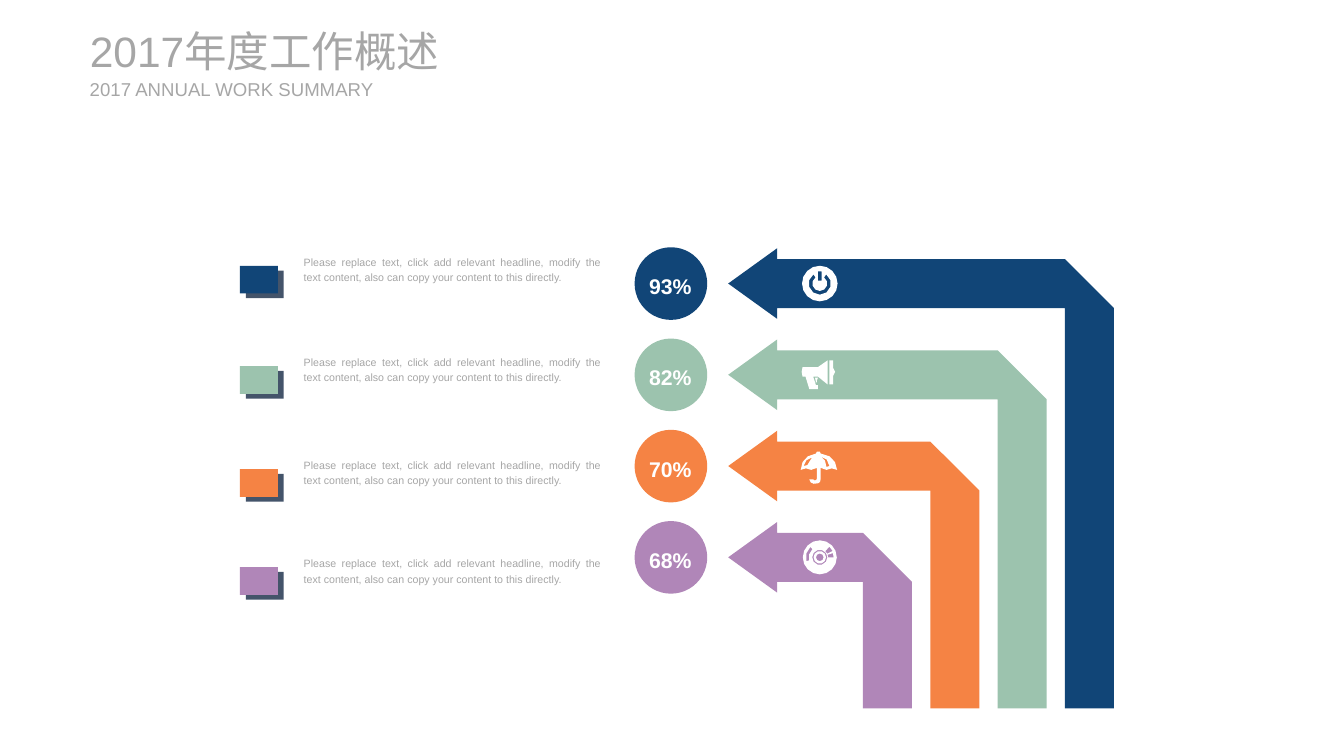
import math

import pptx
import pptx.util
from pptx.dml.color import RGBColor
from pptx.enum.shapes import MSO_SHAPE
from pptx.enum.text import MSO_ANCHOR, MSO_AUTO_SIZE, PP_ALIGN

Pt = pptx.util.Pt

NAVY = RGBColor(0x11, 0x45, 0x77)
GREEN = RGBColor(0x9C, 0xC3, 0xAE)
ORANGE = RGBColor(0xF5, 0x83, 0x44)
PURPLE = RGBColor(0xB0, 0x86, 0xB8)
SLATE = RGBColor(0x44, 0x54, 0x6A)
GREY = RGBColor(0xA6, 0xA6, 0xA6)
WHITE = RGBColor(0xFF, 0xFF, 0xFF)

BODY = ("Please replace text, click add relevant headline, modify the text "
        "content, also can copy your content to this directly.")


# Text and shape helpers
def write_text(tf, text, *, size, color=GREY, bold=False, align=PP_ALIGN.LEFT,
               anchor=MSO_ANCHOR.TOP, spacing=1.0, margins=(0, 0), wrap=True):
    tf.word_wrap = wrap
    tf.auto_size = MSO_AUTO_SIZE.NONE
    tf.vertical_anchor = anchor
    tf.margin_left = tf.margin_right = Pt(margins[0])
    tf.margin_top = tf.margin_bottom = Pt(margins[1])
    p = tf.paragraphs[0]
    p.alignment = align
    p.line_spacing = spacing
    r = p.add_run()
    r.text = text
    r.font.name = "Arial"
    r.font.size = Pt(size)
    r.font.bold = bold
    r.font.color.rgb = color


def paint(sp, color):
    sp.shadow.inherit = False
    sp.fill.solid()
    sp.fill.fore_color.rgb = color
    sp.line.fill.background()


def add_preset(slide, kind, x, y, w, h, color):
    sp = slide.shapes.add_shape(kind, Pt(x), Pt(y), Pt(w), Pt(h))
    paint(sp, color)
    return sp


def add_outline(slide, x, y, contours, color):
    """Fill closed contours whose points are relative to (x, y)."""
    fb = None
    for contour in contours:
        pts = [(Pt(x + px), Pt(y + py)) for px, py in contour]
        if fb is None:
            fb = slide.shapes.build_freeform(*pts[0])
        else:
            fb.move_to(*pts[0])
        fb.add_line_segments(pts[1:], close=True)
    paint(fb.convert_to_shape(), color)


# Contour helpers
def arc(radius, start, end, steps):
    angles = [math.radians(start + (end - start) * i / steps)
              for i in range(steps + 1)]
    return [(radius * math.cos(a), radius * math.sin(a)) for a in angles]


def circle(radius, steps):
    return arc(radius, 0, 360, steps)[:-1]


def sector(inner, outer, start, end, steps=1):
    return arc(outer, start, end, steps) + arc(inner, end, start, steps)


def curve(a, b, c, d, steps=3):
    """Points along a cubic curve, without its end point."""
    pts = []
    for i in range(steps):
        t = i / steps
        u = 1 - t
        weights = (u ** 3, 3 * u * u * t, 3 * u * t * t, t ** 3)
        pts.append(tuple(sum(k * p[axis] for k, p in zip(weights, (a, b, c, d)))
                         for axis in (0, 1)))
    return pts


# Icons, in points from the icon centre
POWER = [
    circle(13.4, 16),
    sector(5.6, 8.4, -55, 235, 8),
    [(-1.4, -9.2), (1.4, -9.2), (1.4, -2.2), (-1.4, -2.2)],
]
MEGAPHONE = [
    [(-13, -5.8), (-1.4, -5.8), (5.8, -10.8), (5.8, 7.2), (-1.4, 1.4), (-5, 1.4),
     (-2.9, 7.9), (-1.4, 7.9), (-1.4, 10.8), (-7.9, 10.8), (-10.8, 1.4),
     (-13, 1.4), (-13.7, -2.2)],
    [(7.2, -10.8), (10.1, -10.8), (10.1, -5), (11.5, -2.2), (10.1, 0.7),
     (10.1, 7.2), (7.2, 7.2)],
    [(-1.4, 2.2), (-3.6, 2.2), (-2.9, 5.8), (-2.2, 5.8), (-2.2, 4.3)],
]
UMBRELLA = [
    [*curve((-14.4, 2.9), (-14.4, -3.6), (-10, -8.6), (-2.9, -9.4)),
     (-2.9, -9.4), (-2.2, -10.8), (0, -10.8),
     *curve((0.7, -9.4), (8.6, -8.6), (12.6, -3.6), (13, 2.9)),
     *curve((13, 2.9), (10.1, 1.4), (7.9, 1.4), (5, 2.9), 2),
     (5, 2.9), (0.7, 1.4),
     *curve((0.7, 9.4), (0.7, 11.5), (0, 13), (-1.4, 13), 2),
     *curve((-1.4, 13), (-5, 14), (-7.5, 13), (-7.9, 10.1)),
     (-7.9, 10.1),
     *curve((-5, 10.1), (-4.5, 11.2), (-2.2, 11.2), (-2.2, 9.4)),
     (-2.2, 9.4), (-2.2, 1.4),
     *curve((-6.5, 2.9), (-9.4, 1.4), (-11.5, 1.4), (-14.4, 2.9), 2)],
    [(5, 0.7), (3.9, -4), (0.7, -7.2), (5.2, -4.9), (7.2, 0)],
    [(-12.2, 0), (-10, -4.4), (-5.8, -6.5), (-9.4, -0.7)],
]
DISC = [
    circle(12.8, 16), circle(5.7, 10), circle(4.7, 10), circle(2.9, 8),
    sector(8.3, 10.6, 164, 228, 2),
    sector(6.2, 10.8, -48, -26), sector(6.2, 10.4, -18, 0),
]

# Colour, percentage, icon, top of the legend row
ITEMS = [
    (NAVY, "93%", POWER, 187.2),
    (GREEN, "82%", MEGAPHONE, 262.8),
    (ORANGE, "70%", UMBRELLA, 340.4),
    (PURPLE, "68%", DISC, 414.3),
]


# Slide regions
def add_header(slide, x, y, w):
    title = slide.shapes.title
    title.left, title.top, title.width, title.height = Pt(x), Pt(y), Pt(w), Pt(39)
    write_text(title.text_frame, "2017年度工作概述", size=32, anchor=MSO_ANCHOR.MIDDLE)
    sub = slide.shapes.add_textbox(Pt(x), Pt(y + 39.6), Pt(221), Pt(17.3))
    write_text(sub.text_frame, "2017 ANNUAL WORK SUMMARY", size=14,
               anchor=MSO_ANCHOR.MIDDLE)


def add_legend_row(slide, x, y, w, color):
    for dx, dy, fill in ((4.4, 3.6, SLATE), (0, 0, color)):
        add_preset(slide, MSO_SHAPE.RECTANGLE, x + dx, y + 13 + dy, 28.6, 20.9, fill)
    body = slide.shapes.add_textbox(Pt(x + 41), Pt(y), Pt(w - 41), Pt(29.5))
    write_text(body.text_frame, BODY, size=8, align=PP_ALIGN.JUSTIFY, spacing=1.2,
               margins=(7.2, 3.6))


def add_percent(slide, x, y, d, text, color):
    add_preset(slide, MSO_SHAPE.OVAL, x, y, d, d, color)
    label = slide.shapes.add_textbox(Pt(x + 3.8), Pt(y + 12.2), Pt(46.6), Pt(30.2))
    write_text(label.text_frame, text, size=16, color=WHITE, bold=True,
               align=PP_ALIGN.JUSTIFY, spacing=1.2, margins=(7.2, 3.6), wrap=False)


def add_bent_arrow(slide, x, y, w, h, color, icon):
    """Arrow with its tip on the left edge and its tail at the bottom right."""
    head, half, band = 36.9, 26.6, 36.9
    upper, lower = half - band / 2, half + band / 2
    outline = [(0, half), (head, 0), (head, upper), (w - band, upper), (w, lower),
               (w, h), (w - band, h), (w - band, lower), (head, lower),
               (head, 2 * half)]
    add_outline(slide, x, y, [outline], color)
    add_outline(slide, x + 69, y + half, icon, WHITE)


def build_summary(prs):
    slide = prs.slides.add_slide(prs.slide_layouts[5])
    add_header(slide, 67.6, 18.7, 311)
    bottom = 533.7
    for i, (color, percent, icon, row_top) in enumerate(ITEMS):
        top = 187 + 68.75 * i
        add_percent(slide, 478, top - 0.7, 54.7, percent, color)
        add_bent_arrow(slide, 548.5, top, 290.5 - 50.7 * i, bottom - top, color, icon)
        add_legend_row(slide, 180.7, row_top, 279.4, color)


def main():
    prs = pptx.Presentation()
    prs.slide_width, prs.slide_height = Pt(1012.3), Pt(569.5)
    build_summary(prs)
    prs.save("out.pptx")


if __name__ == "__main__":
    main()
